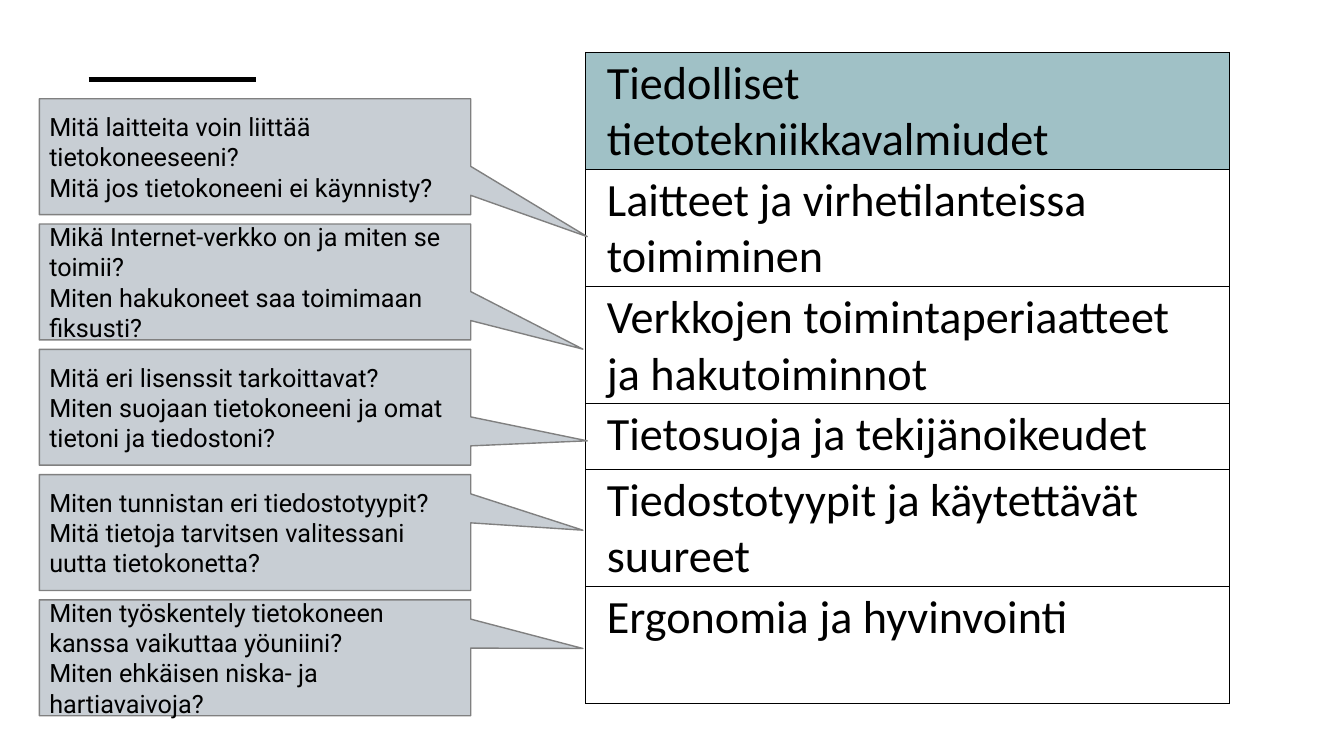
from dataclasses import dataclass
from typing import Any

from lxml.etree import SubElement
from pptx import Presentation
from pptx.dml.color import RGBColor
from pptx.enum.shapes import MSO_CONNECTOR, MSO_SHAPE
from pptx.enum.text import MSO_ANCHOR, PP_ALIGN
from pptx.oxml import parse_xml
from pptx.oxml.ns import nsdecls, qn
from pptx.util import Inches, Pt

WIDE, HIGH = Inches(13.33), Inches(7.5)


@dataclass(frozen=True)
class Theme:
    ink: str = "000000"
    head: str = "A0C1C6"
    note: str = "C8CED4"
    edge: str = "808080"
    topic: tuple[str, int] = ("Calibri", 33)
    ask: tuple[str, int] = ("Roboto", 18)
    thin: float = 1
    thick: float = 3.5


@dataclass(frozen=True)
class Note:
    """A callout; tip is its point, measured from the centre in box sizes."""
    lines: tuple[str, str]
    tip: tuple[float, float]


@dataclass(frozen=True)
class Topic:
    text: str
    tall: float


LOOK = Theme()

# Shares of the slide's size, in percent
RULE_X, RULE_END, RULE_Y = 6.6, 19.05, 10.53
NOTE_X, NOTE_Y, NOTE_W, NOTE_H, NOTE_STEP = 2.93, 13.07, 32.1, 15.33, 16.57
GRID_X, GRID_Y, GRID_W = 43.58, 6.93, 47.92
FULL, SLIM = 15.5, 8.67

NOTES = (
    Note(("Mitä laitteita voin liittää tietokoneeseeni?",
          "Mitä jos tietokoneeni ei käynnisty?"), (0.77, 0.69)),
    Note(("Mikä Internet-verkko on ja miten se toimii?",
          "Miten hakukoneet saa toimimaan fiksusti?"), (0.76, 0.58)),
    Note(("Mitä eri lisenssit tarkoittavat?",
          "Miten suojaan tietokoneeni ja omat tietoni ja tiedostoni?"),
         (0.77, 0.29)),
    Note(("Miten tunnistan eri tiedostotyypit?",
          "Mitä tietoja tarvitsen valitessani uutta tietokonetta?"),
         (0.76, -0.02)),
    Note(("Miten työskentely tietokoneen kanssa vaikuttaa yöuniini?",
          "Miten ehkäisen niska- ja hartiavaivoja?"), (0.76, -0.08)),
)

TOPICS = (
    Topic("Tiedolliset tietotekniikkavalmiudet", FULL),
    Topic("Laitteet ja virhetilanteissa toimiminen", FULL),
    Topic("Verkkojen toimintaperiaatteet ja hakutoiminnot", FULL),
    Topic("Tietosuoja ja tekijänoikeudet", SLIM),
    Topic("Tiedostotyypit ja käytettävät suureet", FULL),
    Topic("Ergonomia ja hyvinvointi", FULL),
)


def across(share: float) -> int:
    return round(WIDE * share / 100)


def down(share: float) -> int:
    return round(HIGH * share / 100)


def apply(item: Any, values: dict[str, Any]) -> None:
    for name, value in values.items():
        setattr(item, name, value)


def style(font: Any, face: tuple[str, int]) -> None:
    apply(font, {"name": face[0], "size": Pt(face[1]), "bold": False})
    font.color.rgb = RGBColor.from_string(LOOK.ink)


def stroke(line: Any, color: str, width: float) -> None:
    line.color.rgb = RGBColor.from_string(color)
    line.width = Pt(width)


def paint(fill: Any, color: str) -> None:
    fill.solid()
    fill.fore_color.rgb = RGBColor.from_string(color)


def frame(cell: Any) -> None:
    """Draw all four borders of a table cell."""
    props = cell._tc.get_or_add_tcPr()
    for spot, side in enumerate(("lnL", "lnR", "lnT", "lnB")):
        props.insert(spot, parse_xml(
            f'<a:{side} {nsdecls("a")} w="{Pt(LOOK.thin)}"><a:solidFill>'
            f'<a:srgbClr val="{LOOK.ink}"/></a:solidFill></a:{side}>'))


def add_rule(shapes: Any) -> None:
    rule = shapes.add_connector(
        MSO_CONNECTOR.STRAIGHT, across(RULE_X), down(RULE_Y),
        across(RULE_END), down(RULE_Y))
    stroke(rule.line, LOOK.ink, LOOK.thick)
    SubElement(rule._element.spPr, qn("a:effectLst"))


def add_topics(shapes: Any) -> None:
    tall = sum(topic.tall for topic in TOPICS)
    table = shapes.add_table(
        len(TOPICS), 1, across(GRID_X), down(GRID_Y),
        across(GRID_W), down(tall)).table
    apply(table, {"first_row": False, "horz_banding": False})
    inset = {"margin_left": Inches(0.21), "margin_right": Inches(0.21),
             "margin_top": Inches(0.03), "margin_bottom": 0}
    for index, topic in enumerate(TOPICS):
        table.rows[index].height = down(topic.tall)
        cell = table.cell(index, 0)
        apply(cell, {"text": topic.text, **inset})
        style(cell.text_frame.paragraphs[0].runs[0].font, LOOK.topic)
        if index == 0:
            paint(cell.fill, LOOK.head)
        else:
            cell.fill.background()
        frame(cell)


def add_note(shapes: Any, note: Note, top: float) -> None:
    box = shapes.add_shape(
        MSO_SHAPE.RECTANGULAR_CALLOUT, across(NOTE_X), down(top),
        across(NOTE_W), down(NOTE_H))
    box.shadow.inherit = False
    for index, value in enumerate(note.tip):
        box.adjustments[index] = value
    paint(box.fill, LOOK.note)
    stroke(box.line, LOOK.edge, LOOK.thin)
    body = box.text_frame
    apply(body, {"text": "\n".join(note.lines), "word_wrap": True,
                 "vertical_anchor": MSO_ANCHOR.MIDDLE})
    for para in body.paragraphs:
        para.alignment = PP_ALIGN.LEFT
        style(para.runs[0].font, LOOK.ask)


def main() -> None:
    deck = Presentation()
    apply(deck, {"slide_width": WIDE, "slide_height": HIGH})
    shapes = deck.slides.add_slide(deck.slide_layouts[6]).shapes
    add_rule(shapes)
    add_topics(shapes)
    for index, note in enumerate(NOTES):
        add_note(shapes, note, NOTE_Y + index * NOTE_STEP)
    deck.save("out.pptx")


if __name__ == "__main__":
    main()
